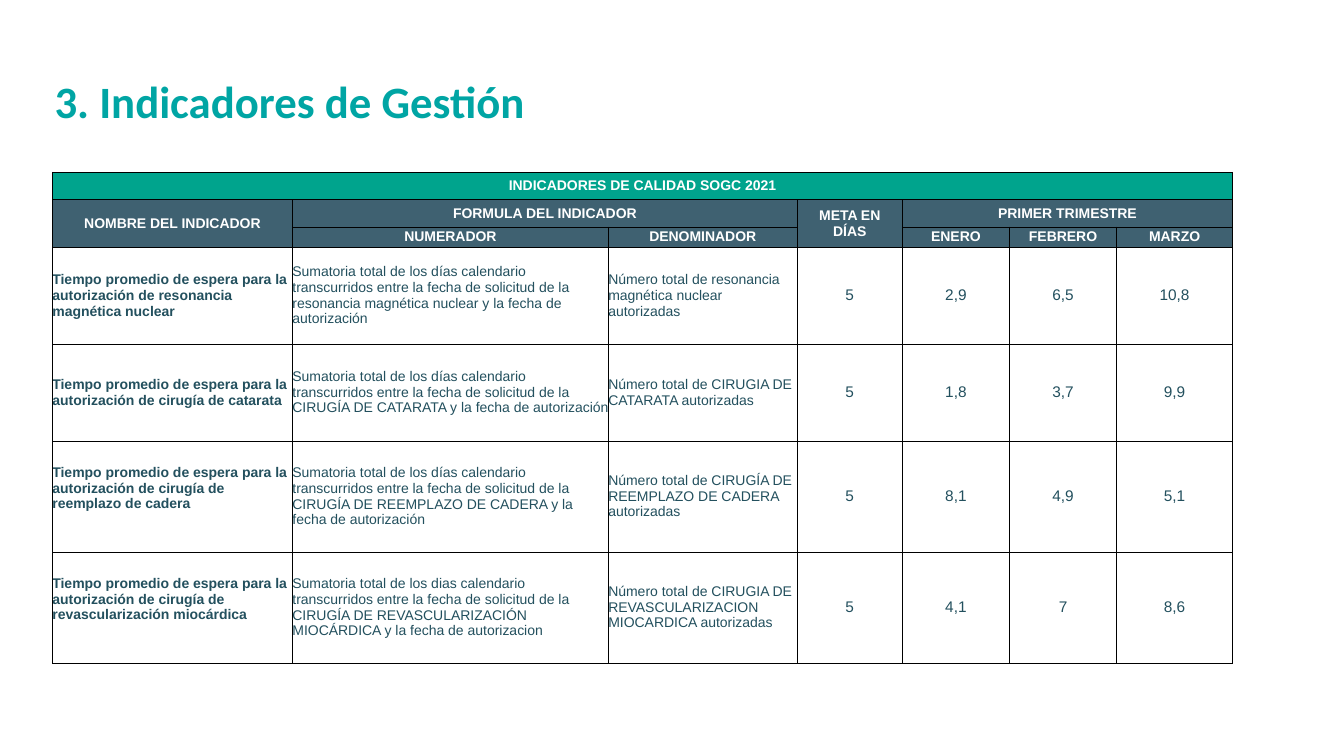
import pptx
import pptx.dml.color
import pptx.enum.text
import pptx.oxml
import pptx.oxml.ns
import pptx.util
from pptx.util import Cm, Pt

TITLE = "3. Indicadores de Gestión"

# Header cells: text, row, column, rows spanned, columns spanned
HEADERS = [
    ("INDICADORES DE CALIDAD SOGC 2021", 0, 0, 1, 7),
    ("NOMBRE DEL INDICADOR", 1, 0, 2, 1),
    ("FORMULA DEL INDICADOR", 1, 1, 1, 2),
    ("META EN DÍAS", 1, 3, 2, 1),
    ("PRIMER TRIMESTRE", 1, 4, 1, 3),
    ("NUMERADOR", 2, 1, 1, 1),
    ("DENOMINADOR", 2, 2, 1, 1),
    ("ENERO", 2, 4, 1, 1),
    ("FEBRERO", 2, 5, 1, 1),
    ("MARZO", 2, 6, 1, 1),
]
INDICATORS = [
    ("Tiempo promedio de espera para la autorización de resonancia magnética nuclear",
     "Sumatoria total de los días calendario transcurridos entre la fecha de solicitud "
     "de la resonancia magnética nuclear y la fecha de autorización",
     "Número total de resonancia magnética nuclear autorizadas",
     "5", "2,9", "6,5", "10,8"),
    ("Tiempo promedio de espera para la autorización de cirugía de catarata",
     "Sumatoria total de los días calendario transcurridos entre la fecha de solicitud "
     "de la CIRUGÍA DE CATARATA y la fecha de autorización",
     "Número total de CIRUGIA DE CATARATA autorizadas",
     "5", "1,8", "3,7", "9,9"),
    ("Tiempo promedio de espera para la autorización de cirugía de reemplazo de cadera",
     "Sumatoria total de los días calendario transcurridos entre la fecha de solicitud "
     "de la CIRUGÍA DE REEMPLAZO DE CADERA y la fecha de autorización",
     "Número total de CIRUGÍA DE REEMPLAZO DE CADERA autorizadas",
     "5", "8,1", "4,9", "5,1"),
    ("Tiempo promedio de espera para la autorización de cirugía de revascularización miocárdica",
     "Sumatoria total de los dias calendario transcurridos entre la fecha de solicitud "
     "de la CIRUGÍA DE REVASCULARIZACIÓN MIOCÁRDICA y la fecha de autorizacion",
     "Número total de CIRUGIA DE REVASCULARIZACION MIOCARDICA autorizadas",
     "5", "4,1", "7", "8,6"),
]
COL_WIDTHS = [6.05, 7.96, 4.76, 2.65, 2.7, 2.7, 2.92]
ROW_HEIGHTS = [0.69, 0.69, 0.51, 2.44, 2.44, 2.8, 2.8]
FIRST_BODY_ROW = 3
TALL_ROW = 2.8

TEAL, GREEN, SLATE, INK, WHITE = "00A5A4", "00A48D", "3F6171", "23505E", "FFFFFF"
ALIGN = pptx.enum.text.PP_ALIGN
MIDDLE = pptx.enum.text.MSO_ANCHOR.MIDDLE


def rgb(value):
    return pptx.dml.color.RGBColor.from_string(value)


def set_font(p, name, size, color, bold):
    p.font.name, p.font.size, p.font.bold = name, Pt(size), bold
    p.font.color.rgb = rgb(color)


def set_borders(cell):
    tc_pr = cell._tc.get_or_add_tcPr()
    for i, side in enumerate(("lnL", "lnR", "lnT", "lnB")):
        tc_pr.insert(i, pptx.oxml.parse_xml(
            f'<a:{side} {pptx.oxml.ns.nsdecls("a")} w="6350"><a:solidFill>'
            f'<a:srgbClr val="000000"/></a:solidFill></a:{side}>'))


def fill_cell(cell, text, size, color, bold, align, fill, margins=(0, 0, 0, 0)):
    cell.fill.solid()
    cell.fill.fore_color.rgb = rgb(fill)
    cell.vertical_anchor = MIDDLE
    (cell.margin_left, cell.margin_top,
     cell.margin_right, cell.margin_bottom) = map(Cm, margins)
    p = cell.text_frame.paragraphs[0]
    p.text, p.alignment = text, align
    set_font(p, "Arial", size, color, bold)


prs = pptx.Presentation()
prs.slide_width, prs.slide_height = Cm(33.87), Cm(19.05)
s = prs.slides.add_slide(prs.slide_layouts[5])

# Title
title = s.shapes.title
title.left, title.top, title.width, title.height = Cm(1.12), Cm(1.73), Cm(18.29), Cm(1.63)
tf = title.text_frame
tf.text = TITLE
tf.vertical_anchor = MIDDLE
tf.auto_size = pptx.enum.text.MSO_AUTO_SIZE.NONE
tf.paragraphs[0].alignment = ALIGN.LEFT
set_font(tf.paragraphs[0], "Calibri", 32, TEAL, True)

# Table grid
table = s.shapes.add_table(len(ROW_HEIGHTS), len(COL_WIDTHS), Cm(1.32), Cm(4.34),
                           Cm(sum(COL_WIDTHS)), Cm(sum(ROW_HEIGHTS))).table
for column, width in zip(table.columns, COL_WIDTHS):
    column.width = Cm(width)
for row, height in zip(table.rows, ROW_HEIGHTS):
    row.height = Cm(height)

# Header rows
for text, row, col, row_span, col_span in HEADERS:
    cell = table.cell(row, col)
    if row_span * col_span > 1:
        cell.merge(table.cell(row + row_span - 1, col + col_span - 1))
    fill_cell(cell, text, 10, WHITE, True, ALIGN.CENTER, SLATE if row else GREEN,
              (0.25, 0.13, 0.25, 0.13) if row < 2 else (0, 0, 0, 0))

# Indicator rows: name in bold, formula, then centred figures
for row, indicator in enumerate(INDICATORS, FIRST_BODY_ROW):
    for col, text in enumerate(indicator):
        figure = col > 2
        # Names in the tall rows sit slightly above the middle
        raised = col == 0 and ROW_HEIGHTS[row] == TALL_ROW
        fill_cell(table.cell(row, col), text, 11 if figure else 10, INK, col == 0,
                  ALIGN.CENTER if figure else ALIGN.LEFT, WHITE,
                  (0, 0, 0, 0.4 if raised else 0))

for cell in table.iter_cells():
    set_borders(cell)

prs.save("out.pptx")
